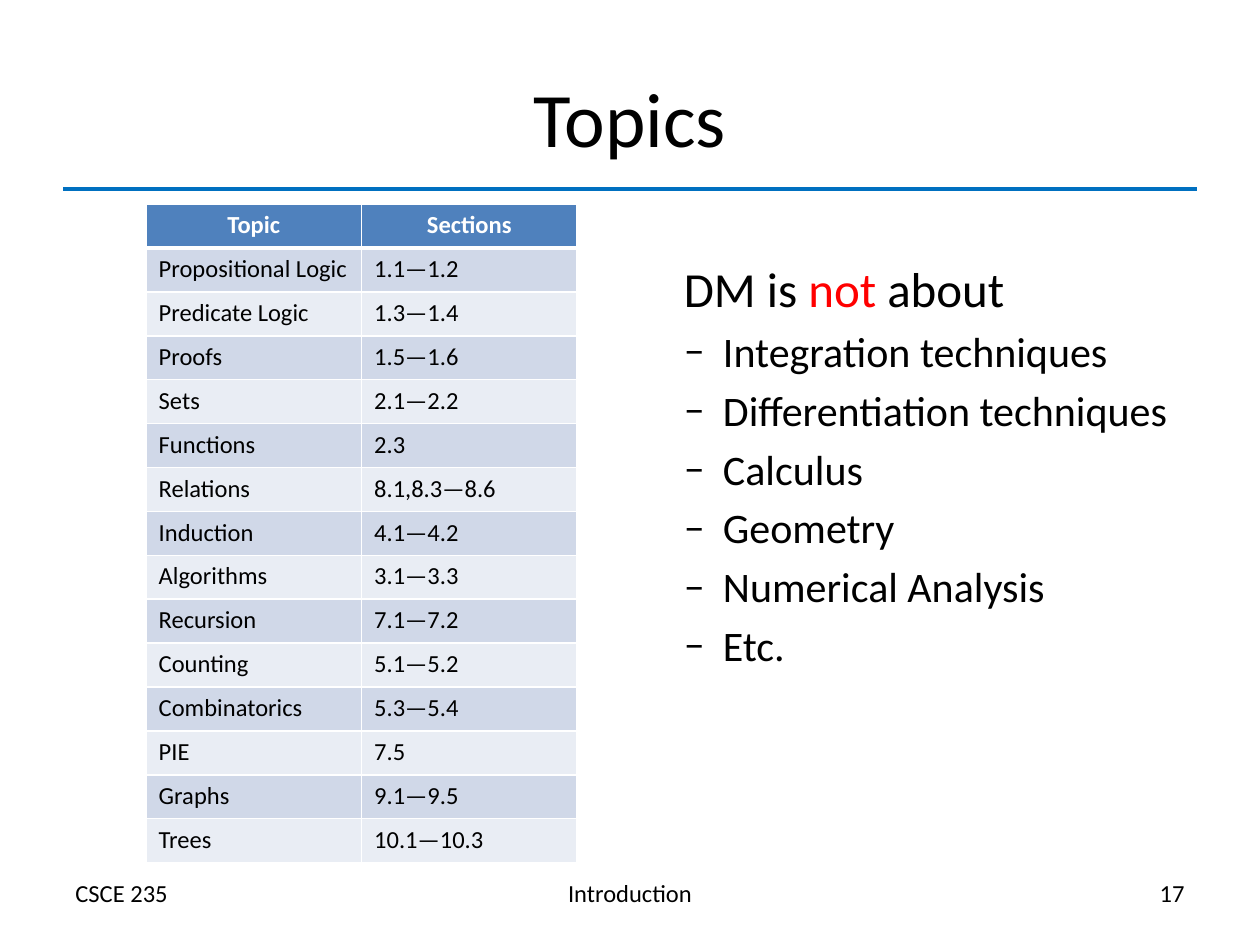
from lxml.etree import SubElement
from pptx import Presentation
from pptx.dml.color import RGBColor
from pptx.enum.shapes import MSO_CONNECTOR
from pptx.enum.text import MSO_ANCHOR as Anchor, PP_ALIGN as Align
from pptx.oxml import parse_xml
from pptx.oxml.ns import nsdecls, qn
from pptx.util import Inches, Pt

COLORS = {
    "text": "000000", "accent": "FF0000", "rule": "0070C0",
    "header": "4F81BD", "band_dark": "D0D8E8", "band_light": "E9EDF4",
    "white": "FFFFFF",
}
TOPICS = [
    ("Topic", "Sections"),
    ("Propositional Logic", "1.1—1.2"),
    ("Predicate Logic", "1.3—1.4"),
    ("Proofs", "1.5—1.6"),
    ("Sets", "2.1—2.2"),
    ("Functions", "2.3"),
    ("Relations", "8.1,8.3—8.6"),
    ("Induction", "4.1—4.2"),
    ("Algorithms", "3.1—3.3"),
    ("Recursion", "7.1—7.2"),
    ("Counting", "5.1—5.2"),
    ("Combinatorics", "5.3—5.4"),
    ("PIE", "7.5"),
    ("Graphs", "9.1—9.5"),
    ("Trees", "10.1—10.3"),
]
EXCLUDED = ["Integration techniques", "Differentiation techniques", "Calculus",
            "Geometry", "Numerical Analysis", "Etc."]


def color(name):
    return RGBColor.from_string(COLORS[name])


def add_span(para, text, size, ink="text", bold=False):
    span = para.add_run()
    span.text = text
    for name, value in {"name": "Calibri", "size": Pt(size), "bold": bold}.items():
        setattr(span.font, name, value)
    span.font.color.rgb = color(ink)


def add_box(page, left, top, width, height):
    box = page.shapes.add_textbox(Inches(left), Inches(top), Inches(width), Inches(height))
    box.text_frame.word_wrap = True
    return box.text_frame


def place_title(page, left, top, width, height):
    title = page.shapes.title
    place = {"left": left, "top": top, "width": width, "height": height}
    for name, value in place.items():
        setattr(title, name, Inches(value))
    title.text_frame.vertical_anchor = Anchor.MIDDLE
    para = title.text_frame.paragraphs[0]
    para.alignment = Align.CENTER
    add_span(para, "Topics", 44)


def add_rule(page, left, top, width):
    rule = page.shapes.add_connector(MSO_CONNECTOR.STRAIGHT, Inches(left), Inches(top),
                                     Inches(left + width), Inches(top))
    rule.line.color.rgb = color("rule")
    rule.line.width = Pt(2)
    SubElement(rule._element.spPr, qn("a:effectLst"))


def add_footer(page, left, top, width, height):
    parts = [("CSCE 235", Align.LEFT), ("Introduction", Align.CENTER), ("17", Align.RIGHT)]
    pitch = (width - 2.92) / 2
    for index, (text, align) in enumerate(parts):
        para = add_box(page, left + index * pitch, top, 2.92, height).paragraphs[0]
        para.alignment = align
        add_span(para, text, 14)


def set_borders(cell, top, bottom):
    props = cell._tc.get_or_add_tcPr()
    for index, (side, points) in enumerate(
            {"L": 1, "R": 1, "T": top, "B": bottom}.items()):
        props.insert(index, parse_xml(
            f'<a:ln{side} {nsdecls("a")} w="{Pt(points)}"><a:solidFill>'
            f'<a:srgbClr val="{COLORS["white"]}"/></a:solidFill></a:ln{side}>'))


def add_topic_table(page, left, top, width, height):
    table = page.shapes.add_table(len(TOPICS), 2, Inches(left), Inches(top),
                                  Inches(width), Inches(height)).table
    table.horz_banding = False
    for row, texts in enumerate(TOPICS):
        header = row == 0
        fill = "header" if header else "band_dark" if row % 2 else "band_light"
        for column, text in enumerate(texts):
            cell = table.cell(row, column)
            cell.fill.solid()
            cell.fill.fore_color.rgb = color(fill)
            set_borders(cell, top=3 if row == 1 else 1, bottom=3 if header else 1)
            para = cell.text_frame.paragraphs[0]
            para.alignment = Align.CENTER if header else Align.LEFT
            add_span(para, text, 14, "white" if header else "text", header)


def add_exclusions(page, left, top, width, height):
    frame = add_box(page, left, top, width, height)
    # Lead line
    lead = frame.paragraphs[0]
    lead.space_before = Pt(5.6)
    for text, ink in [("DM is ", "text"), ("not", "accent"), (" about", "text")]:
        add_span(lead, text, 28, ink)
    # Dashed list
    for text in EXCLUDED:
        para = frame.add_paragraph()
        para.space_before = Pt(4.8)
        props = para._p.get_or_add_pPr()
        props.set("marL", str(Inches(0.31)))
        props.set("indent", str(-Inches(0.31)))
        SubElement(props, qn("a:buFont"), typeface="Calibri")
        SubElement(props, qn("a:buChar"), char="–")
        add_span(para, text, 24)


def main():
    deck = Presentation()
    deck.slide_width, deck.slide_height = Inches(10), Inches(7.5)
    page = deck.slides.add_slide(deck.slide_layouts[5])
    add_footer(page, 0.5, 6.92, 9, 0.34)
    add_rule(page, 0.5, 1.5, 9)
    place_title(page, 0.5, 0.3, 9, 1.25)
    add_topic_table(page, 1.16, 1.62, 3.42, 5.23)
    add_exclusions(page, 5.33, 2, 4.17, 4.75)
    deck.save("out.pptx")


if __name__ == "__main__":
    main()
